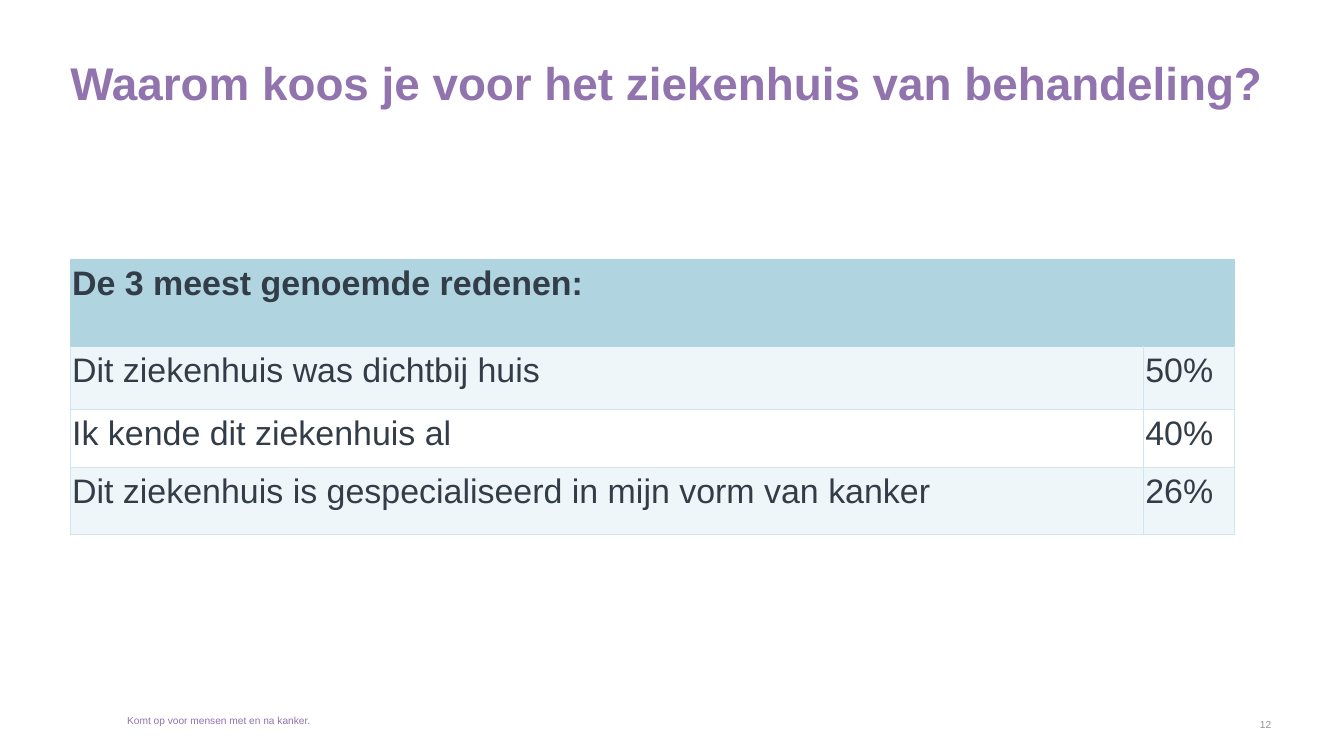
"""Builds the slide on the three main reasons for choosing a hospital."""
import pptx
import pptx.dml.color
import pptx.enum.text
import pptx.oxml
import pptx.oxml.ns
import pptx.util

Pt = pptx.util.Pt
RGBColor = pptx.dml.color.RGBColor
PP_ALIGN = pptx.enum.text.PP_ALIGN

PURPLE = RGBColor(0x91, 0x73, 0xAE)
GREY = RGBColor(0x90, 0x92, 0x95)
DARK = RGBColor(0x33, 0x3D, 0x48)
HEADER_BLUE = RGBColor(0xB1, 0xD4, 0xE1)
BAND_BLUE = RGBColor(0xEF, 0xF6, 0xF9)
BORDER_BLUE = RGBColor(0xD0, 0xE5, 0xED)

REASONS = [
    ("De 3 meest genoemde redenen:", ""),
    ("Dit ziekenhuis was dichtbij huis", "50%"),
    ("Ik kende dit ziekenhuis al", "40%"),
    ("Dit ziekenhuis is gespecialiseerd in mijn vorm van kanker", "26%"),
]
ROW_HEIGHTS = [102.5, 74, 68.5, 78.5]
COLUMN_WIDTHS = [1264.3, 107.3]


def style_font(font, size, color, bold=False):
    font.name = "Arial"
    font.size = Pt(size)
    font.bold = bold
    font.color.rgb = color


def fill_box(box, text, size, color, bold=False, align=PP_ALIGN.LEFT):
    frame = box.text_frame
    frame.text = text
    frame.word_wrap = True
    frame.auto_size = pptx.enum.text.MSO_AUTO_SIZE.NONE
    frame.vertical_anchor = pptx.enum.text.MSO_ANCHOR.TOP
    frame.margin_left = frame.margin_top = frame.margin_right = frame.margin_bottom = 0
    para = frame.paragraphs[0]
    para.alignment = align
    style_font(para.runs[0].font, size, color, bold)


def add_title(page, text):
    title = page.shapes.title
    title.left, title.top = Pt(82.8), Pt(64)
    title.width, title.height = Pt(1417.7), Pt(123)
    fill_box(title, text, 54, PURPLE, bold=True)


def add_label(page, text, left, top, width, height, color, align=PP_ALIGN.LEFT):
    box = page.shapes.add_textbox(Pt(left), Pt(top), Pt(width), Pt(height))
    fill_box(box, text, 12, color, align=align)


def set_borders(cell, colors):
    properties = cell._tc.get_or_add_tcPr()
    for side, color in zip("LRTB", colors):
        properties.append(pptx.oxml.parse_xml(
            f'<a:ln{side} {pptx.oxml.ns.nsdecls("a")} w="{Pt(1)}"><a:solidFill>'
            f'<a:srgbClr val="{color}"/></a:solidFill></a:ln{side}>'))


def style_cell(cell, text, row_index):
    is_header = row_index == 0
    edge = HEADER_BLUE if is_header else BORDER_BLUE
    top = HEADER_BLUE if row_index < 2 else BORDER_BLUE
    set_borders(cell, [edge, edge, top, edge])
    if row_index == 2:
        cell.fill.background()
    else:
        cell.fill.solid()
        cell.fill.fore_color.rgb = HEADER_BLUE if is_header else BAND_BLUE
    cell.margin_left = cell.margin_right = Pt(2.2)
    cell.margin_top = cell.margin_bottom = 0
    para = cell.text_frame.paragraphs[0]
    para.text = text
    para.line_spacing = 1.15
    style_font(para.font, 40, DARK, is_header)
    for run in para.runs:
        style_font(run.font, 40, DARK, is_header)


def add_reasons_table(page):
    frame = page.shapes.add_table(
        len(REASONS), len(COLUMN_WIDTHS), Pt(82.8), Pt(305.5),
        Pt(sum(COLUMN_WIDTHS)), Pt(sum(ROW_HEIGHTS)))
    table = frame.table
    table.first_row = table.horz_banding = False
    for column, width in zip(table.columns, COLUMN_WIDTHS):
        column.width = Pt(width)
    for row_index, (row, texts) in enumerate(zip(table.rows, REASONS)):
        row.height = Pt(ROW_HEIGHTS[row_index])
        for cell, text in zip(row.cells, texts):
            style_cell(cell, text, row_index)
            cell.text_frame.paragraphs[0].space_before = Pt(0)


def main():
    deck = pptx.Presentation()
    deck.slide_width, deck.slide_height = Pt(1583.3), Pt(890.6)
    page = deck.slides.add_slide(deck.slide_layouts[5])
    add_title(page, "Waarom koos je voor het ziekenhuis van behandeling?")
    add_reasons_table(page)
    add_label(page, "Komt op voor mensen met en na kanker.", 149.8, 841.7, 221.8, 15.8, PURPLE)
    add_label(page, "12", 1404, 846.7, 93.6, 10.8, GREY, PP_ALIGN.RIGHT)
    deck.save("out.pptx")


if __name__ == "__main__":
    main()
